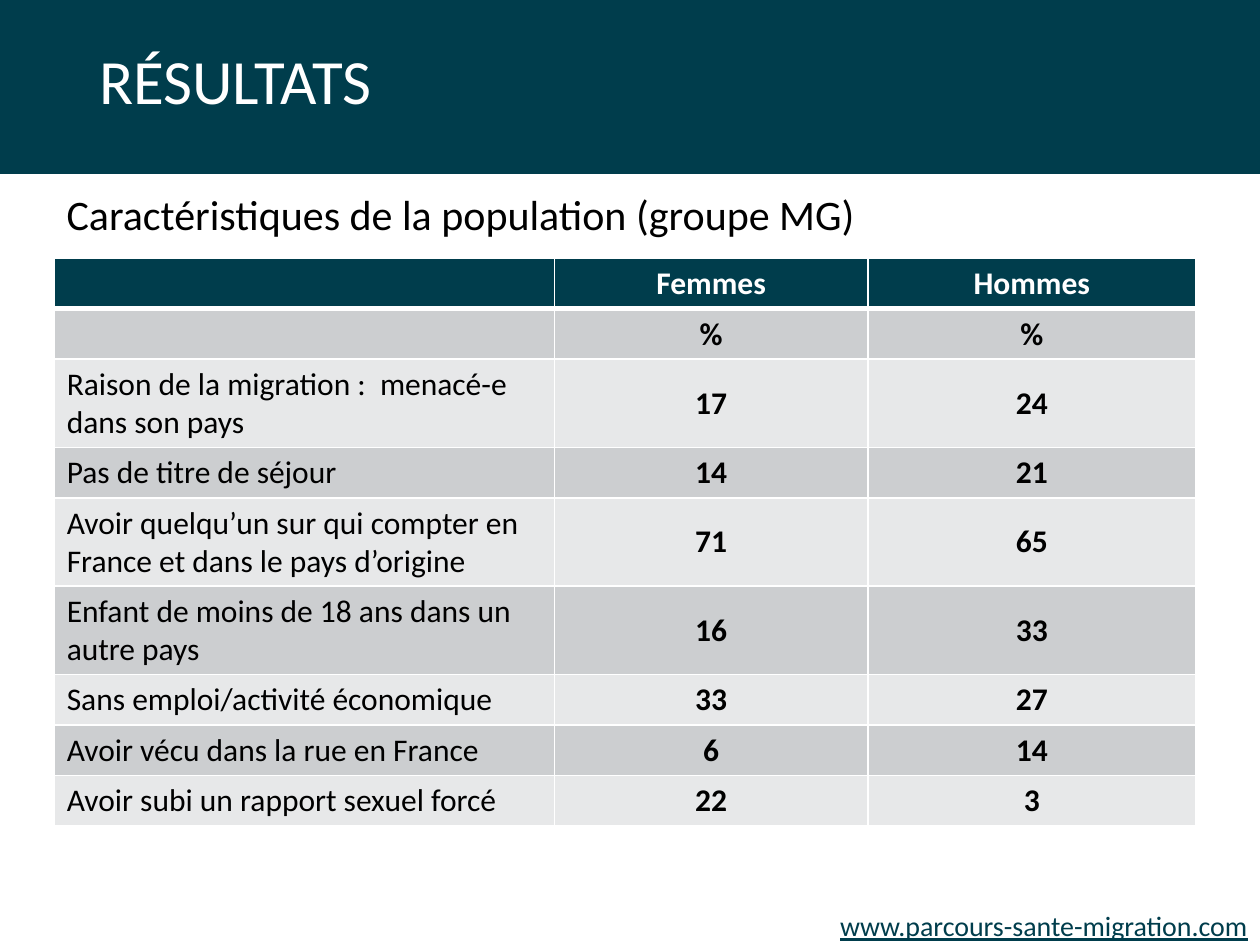
from lxml import etree
from pptx import Presentation
from pptx.dml.color import RGBColor
from pptx.enum.shapes import MSO_SHAPE
from pptx.enum.text import MSO_ANCHOR, PP_ALIGN
from pptx.oxml.ns import qn
from pptx.util import Inches, Pt

RECTANGLE = MSO_SHAPE.RECTANGLE
TOP, MIDDLE = MSO_ANCHOR.TOP, MSO_ANCHOR.MIDDLE
LEFT, CENTER = PP_ALIGN.LEFT, PP_ALIGN.CENTER

TEAL = RGBColor(0x00, 0x3D, 0x4C)
WHITE = RGBColor(0xFF, 0xFF, 0xFF)
BLACK = RGBColor(0x00, 0x00, 0x00)
DARK_BAND = RGBColor(0xCC, 0xCE, 0xD0)
LIGHT_BAND = RGBColor(0xE7, 0xE8, 0xE9)
FONT = "Calibri"

COLUMN_WIDTHS = [3.97, 2.49, 2.6]
SINGLE_ROW, DOUBLE_ROW = 0.4, 0.7
ROWS = [
    (SINGLE_ROW, "", "Femmes", "Hommes"),
    (SINGLE_ROW, "", "%", "%"),
    (DOUBLE_ROW, "Raison de la migration :  menacé-e dans son pays", "17", "24"),
    (SINGLE_ROW, "Pas de titre de séjour", "14", "21"),
    (DOUBLE_ROW, "Avoir quelqu’un sur qui compter en France et dans le pays d’origine", "71", "65"),
    (DOUBLE_ROW, "Enfant de moins de 18 ans dans un autre pays", "16", "33"),
    (SINGLE_ROW, "Sans emploi/activité économique", "33", "27"),
    (SINGLE_ROW, "Avoir vécu dans la rue en France", "6", "14"),
    (SINGLE_ROW, "Avoir subi un rapport sexuel forcé", "22", "3"),
]


def add_span(para, text, size, color, bold=False, underline=False):
    span = para.add_run()
    span.text = text
    font = span.font
    font.name, font.size, font.bold = FONT, Pt(size), bold
    font.underline = underline
    font.color.rgb = color


def add_text(page, box, text, size, color, anchor=TOP, underline=False):
    frame = page.shapes.add_textbox(*map(Inches, box)).text_frame
    frame.word_wrap = True
    frame.vertical_anchor = anchor
    para = frame.paragraphs[0]
    add_span(para, text, size, color, underline=underline)
    return para


def add_banner(page, box):
    left, top, width, height = box
    band = page.shapes.add_shape(RECTANGLE, *map(Inches, box))
    band.shadow.inherit = False
    band.fill.solid()
    band.fill.fore_color.rgb = TEAL
    band.line.fill.background()
    title_box = (left + 0.69, top + 0.12, width - 1.38, height - 0.29)
    title = add_text(page, title_box, "RÉSULTATS", 36, WHITE, MIDDLE)
    title.line_spacing = 0.9


def set_borders(cell, widths):
    properties = cell._tc.get_or_add_tcPr()
    for side, width in zip("LRTB", widths):
        line = etree.SubElement(properties, qn(f"a:ln{side}"), w=str(Pt(width)))
        fill = etree.SubElement(line, qn("a:solidFill"))
        etree.SubElement(fill, qn("a:srgbClr"), val=str(WHITE))


def fill_cell(cell, text, row, column):
    header = row == 0
    top_width = 3 if row == 1 else 1
    bottom_width = 3 if header else 1
    set_borders(cell, (1, 1, top_width, bottom_width))
    cell.fill.solid()
    band = LIGHT_BAND if row % 2 == 0 else DARK_BAND
    cell.fill.fore_color.rgb = TEAL if header else band
    if text:
        label = column == 0
        cell.vertical_anchor = TOP if label else MIDDLE
        para = cell.text_frame.paragraphs[0]
        para.alignment = LEFT if label else CENTER
        add_span(para, text, 18, WHITE if header else BLACK, bold=not label)


def add_results(page, box):
    frame = page.shapes.add_table(len(ROWS), len(COLUMN_WIDTHS), *map(Inches, box))
    table = frame.table
    for column, width in zip(table.columns, COLUMN_WIDTHS):
        column.width = Inches(width)
    for row, (height, *texts) in enumerate(ROWS):
        table.rows[row].height = Inches(height)
        for column, text in enumerate(texts):
            fill_cell(table.cell(row, column), text, row, column)


def main():
    deck = Presentation()
    deck.slide_width, deck.slide_height = Inches(10), Inches(7.5)
    page = deck.slides.add_slide(deck.slide_layouts[6])
    add_banner(page, (0, 0, 10, 1.38))
    address = add_text(page, (6.57, 7.16, 3.46, 0.37),
                       "www.parcours-sante-migration.com", 16, TEAL, underline=True)
    add_span(address, " ", 16, BLACK)
    add_text(page, (0.43, 1.45, 9.29, 0.5),
             "Caractéristiques de la population (groupe MG)", 24, BLACK)
    add_results(page, (0.43, 2.05, 9.06, 4.5))
    deck.save("out.pptx")


if __name__ == "__main__":
    main()
